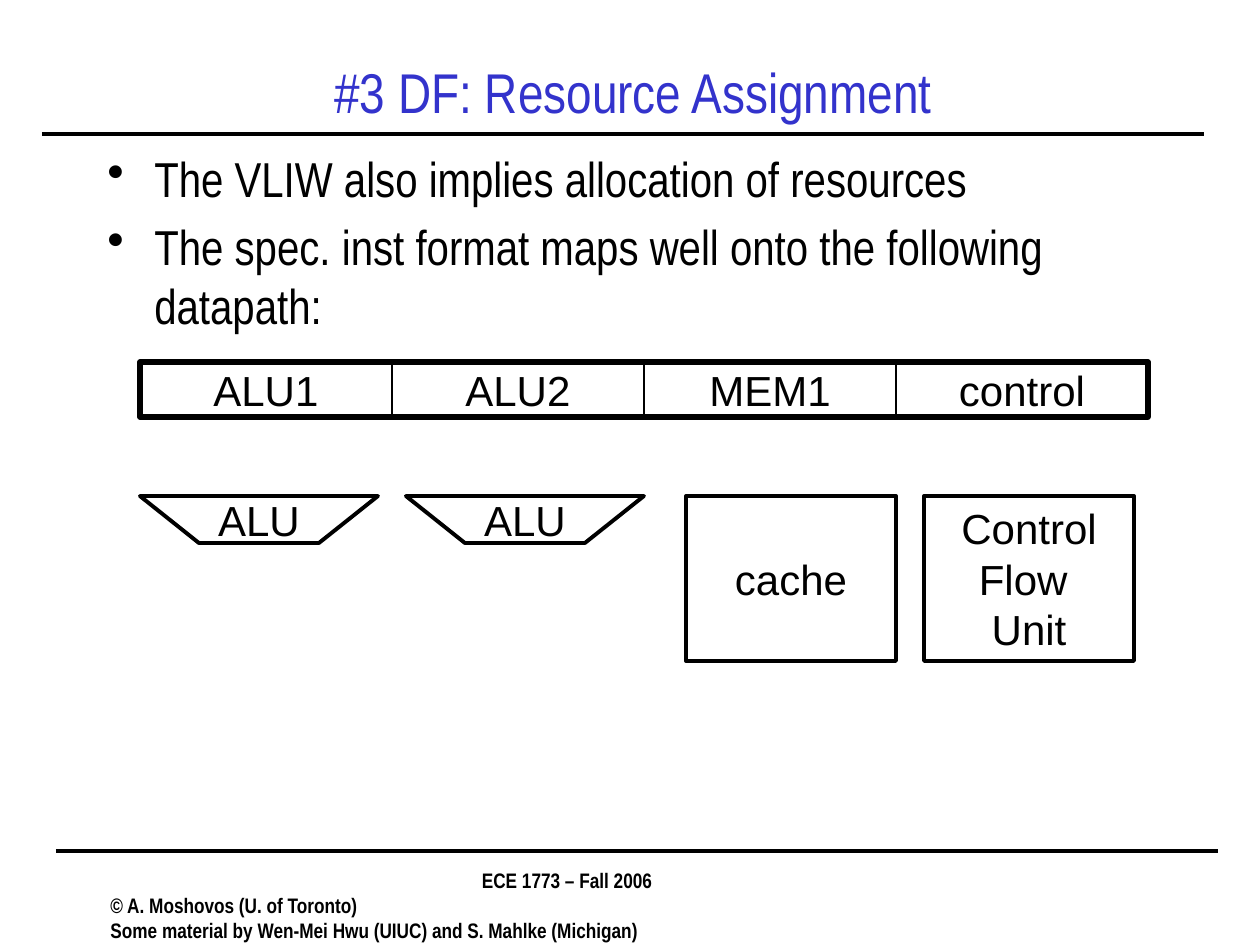
from dataclasses import dataclass

import pptx
import pptx.dml.color
import pptx.enum.shapes
import pptx.enum.text
import pptx.oxml
import pptx.oxml.ns
import pptx.shapes.base
import pptx.text.text
import pptx.util

ALIGN = pptx.enum.text.PP_ALIGN
ANCHOR = pptx.enum.text.MSO_ANCHOR
EMU_PER_PX = 914400 / 126
COLORS = {"ink": "000000", "title": "3333CC"}


@dataclass
class Box:
    left: int
    top: int
    width: int
    height: int

    def emu(self) -> list[int]:
        return [px(v) for v in (self.left, self.top, self.width, self.height)]


@dataclass
class Style:
    size: int
    font: str = "Arial Narrow"
    color: str = "ink"
    bold: bool = False


@dataclass
class Unit:
    box: Box
    lines: list[str]
    line_pt: float = 2.25
    trapezoid: bool = False


LABEL = Style(24, "Arial")


def px(value: float) -> int:
    return round(value * EMU_PER_PX)


def rgb(name: str) -> pptx.dml.color.RGBColor:
    return pptx.dml.color.RGBColor.from_string(COLORS[name])


def write(frame: pptx.text.text.TextFrame, lines: list[str], style: Style,
          align: ALIGN = ALIGN.LEFT) -> None:
    for i, line in enumerate(lines):
        paragraph = frame.paragraphs[0] if i == 0 else frame.add_paragraph()
        paragraph.alignment = align
        run = paragraph.add_run()
        run.text = line
        run.font.size = pptx.util.Pt(style.size)
        run.font.name = style.font
        run.font.bold = style.bold
        run.font.color.rgb = rgb(style.color)


def add_text(shapes, box: Box, anchor: ANCHOR = ANCHOR.TOP) -> pptx.text.text.TextFrame:
    frame = shapes.add_textbox(*box.emu()).text_frame
    frame.word_wrap = True
    frame.vertical_anchor = anchor
    return frame


def add_bullet(paragraph, indent: int) -> None:
    paragraph.space_before = pptx.util.Pt(5.6)
    properties = paragraph._p.get_or_add_pPr()
    properties.set("marL", str(px(indent)))
    properties.set("indent", str(-px(indent)))
    properties.append(pptx.oxml.parse_xml(
        f'<a:buChar {pptx.oxml.ns.nsdecls("a")} char="•"/>'))


def add_rule(shapes, left: int, top: int, width: int) -> None:
    rule = shapes.add_connector(pptx.enum.shapes.MSO_CONNECTOR.STRAIGHT,
                                px(left), px(top), px(left + width), px(top))
    rule.line.color.rgb = rgb("ink")
    rule.line.width = pptx.util.Pt(2.25)
    rule._element.spPr.append(pptx.oxml.parse_xml(
        f'<a:effectLst {pptx.oxml.ns.nsdecls("a")}/>'))


def add_unit(shapes, unit: Unit) -> None:
    box = unit.box
    if unit.trapezoid:
        slant = box.width // 4
        right, bottom = box.left + box.width, box.top + box.height
        builder = shapes.build_freeform(box.left, box.top, scale=EMU_PER_PX)
        builder.add_line_segments([(box.left + slant, bottom),
                                   (right - slant, bottom), (right, box.top)])
        outline = builder.convert_to_shape()
    else:
        outline = shapes.add_shape(pptx.enum.shapes.MSO_SHAPE.RECTANGLE, *box.emu())
    outline.shadow.inherit = False
    outline.fill.background()
    outline.line.color.rgb = rgb("ink")
    outline.line.width = pptx.util.Pt(unit.line_pt)
    outline.text_frame.word_wrap = False
    outline.text_frame.vertical_anchor = ANCHOR.MIDDLE
    write(outline.text_frame, unit.lines, LABEL, ALIGN.CENTER)


def main() -> None:
    deck = pptx.Presentation()
    deck.slide_width, deck.slide_height = px(1260), px(945)
    shapes = deck.slides.add_slide(deck.slide_layouts[6]).shapes

    # Header and footer rules
    add_rule(shapes, 42, 134, 1162)
    add_rule(shapes, 56, 851, 1162)

    # Footer
    footer = add_text(shapes, Box(98, 861, 938, 63))
    write(footer, ["ECE 1773 – Fall 2006", "© A. Moshovos (U. of Toronto)",
                   "Some material by Wen-Mei Hwu (UIUC) and S. Mahlke (Michigan)"],
          Style(12, bold=True))
    footer.paragraphs[0].alignment = ALIGN.CENTER

    # Title
    title = add_text(shapes, Box(98, 56, 1071, 71), ANCHOR.MIDDLE)
    write(title, ["#3 DF: Resource Assignment"], Style(32, color="title"), ALIGN.CENTER)

    # Bullets
    body = add_text(shapes, Box(95, 142, 1071, 698))
    write(body, ["The VLIW also implies allocation of resources",
                 "The spec. inst format maps well onto the following datapath:"], Style(28))
    for paragraph in body.paragraphs:
        add_bullet(paragraph, 47)

    # Instruction format: a heavy frame around four equal fields
    fields = ["ALU1", "ALU2", "MEM1", "control"]
    left, top, width, height = 140, 362, 252, 55
    instruction = shapes.add_group_shape().shapes
    add_unit(instruction, Unit(Box(left, top, width * len(fields), height), [], 3))
    for i, field in enumerate(fields):
        add_unit(instruction, Unit(Box(left + i * width, top, width, height), [field], 0.75))

    # Datapath units
    datapath = [
        Unit(Box(140, 496, 238, 47), ["ALU"], trapezoid=True),
        Unit(Box(406, 496, 238, 47), ["ALU"], trapezoid=True),
        Unit(Box(686, 496, 210, 165), ["cache"]),
        Unit(Box(924, 496, 210, 165), ["Control", "Flow ", "Unit"]),
    ]
    for unit in datapath:
        add_unit(shapes, unit)

    deck.save("out.pptx")


if __name__ == "__main__":
    main()
